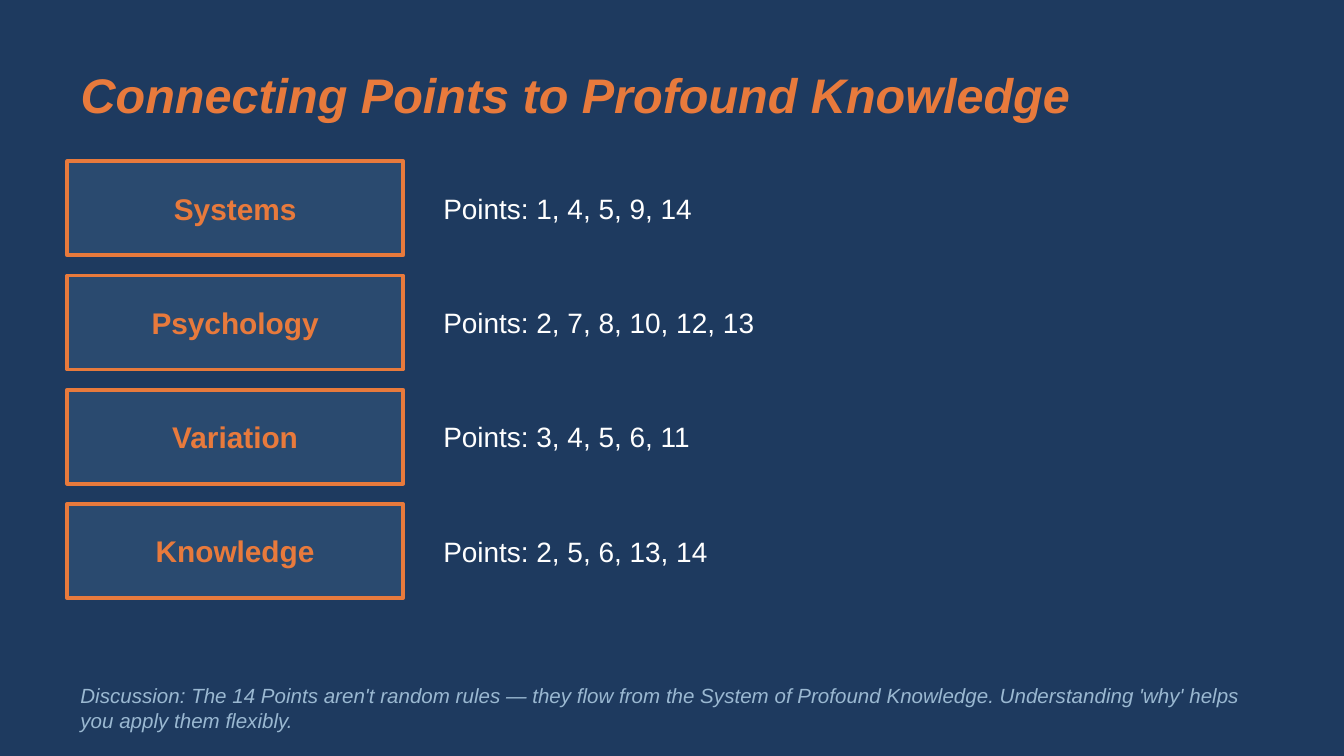
from pptx import Presentation
from pptx.dml.color import RGBColor
from pptx.enum.shapes import MSO_SHAPE
from pptx.enum.text import MSO_ANCHOR, PP_ALIGN
from pptx.util import Inches, Pt

RECTANGLE = MSO_SHAPE.RECTANGLE
MIDDLE, BOTTOM = MSO_ANCHOR.MIDDLE, MSO_ANCHOR.BOTTOM
LEFT, CENTER = PP_ALIGN.LEFT, PP_ALIGN.CENTER

THEME = {
    "background": RGBColor.from_string("1E3A5F"),
    "panel": RGBColor.from_string("2A4A6F"),
    "accent": RGBColor.from_string("E87A3C"),
    "body": RGBColor.from_string("FFFFFF"),
    "muted": RGBColor.from_string("9AB8D1"),
    "font": "Arial",
    "title_size": Pt(26),
    "label_size": Pt(16),
    "points_size": Pt(15),
    "discussion_size": Pt(11),
    "border": Pt(2),
}

AREAS = [
    ("Systems", "Points: 1, 4, 5, 9, 14"),
    ("Psychology", "Points: 2, 7, 8, 10, 12, 13"),
    ("Variation", "Points: 3, 4, 5, 6, 11"),
    ("Knowledge", "Points: 2, 5, 6, 13, 14"),
]
SLIDE_WIDTH = Inches(10)
MARGIN = Inches(0.5)
CONTENT_WIDTH = Inches(9)
FIRST_ROW = Inches(1.2)
ROW_STEP = Inches(0.85)
ROW_HEIGHT = Inches(0.7)


def write(shape, text, role, color, anchor=MIDDLE, align=LEFT, bold=False, italic=False):
    frame = shape.text_frame
    frame.text = text
    frame.word_wrap = True
    frame.vertical_anchor = anchor
    paragraph = frame.paragraphs[0]
    paragraph.alignment = align
    font = paragraph.runs[0].font
    formats = {"name": THEME["font"], "size": THEME[role], "bold": bold, "italic": italic}
    for attribute, value in formats.items():
        setattr(font, attribute, value)
    font.color.rgb = THEME[color]


presentation = Presentation()
presentation.slide_width = SLIDE_WIDTH
presentation.slide_height = SLIDE_WIDTH * 9 // 16
slide = presentation.slides.add_slide(presentation.slide_layouts[5])
slide.background.fill.solid()
slide.background.fill.fore_color.rgb = THEME["background"]

title = slide.shapes.title
title.left, title.top = MARGIN, Inches(0.3)
title.width, title.height = CONTENT_WIDTH, Inches(0.8)
write(title, "Connecting Points to Profound Knowledge", "title_size", "accent", bold=True, italic=True)

for row, (area, points) in enumerate(AREAS):
    top = FIRST_ROW + row * ROW_STEP
    label = slide.shapes.add_shape(RECTANGLE, MARGIN, top, Inches(2.5), ROW_HEIGHT)
    label.shadow.inherit = False
    label.fill.solid()
    label.fill.fore_color.rgb = THEME["panel"]
    label.line.color.rgb = THEME["accent"]
    label.line.width = THEME["border"]
    write(label, area, "label_size", "accent", align=CENTER, bold=True)

    related_points = slide.shapes.add_textbox(Inches(3.2), top, Inches(6.3), ROW_HEIGHT)
    write(related_points, points, "points_size", "body")

discussion = slide.shapes.add_textbox(MARGIN, Inches(4.8), CONTENT_WIDTH, ROW_HEIGHT)
write(
    discussion,
    "Discussion: The 14 Points aren't random rules — they flow from the System of "
    "Profound Knowledge. Understanding 'why' helps you apply them flexibly.",
    "discussion_size", "muted", anchor=BOTTOM, italic=True,
)

presentation.save("out.pptx")
